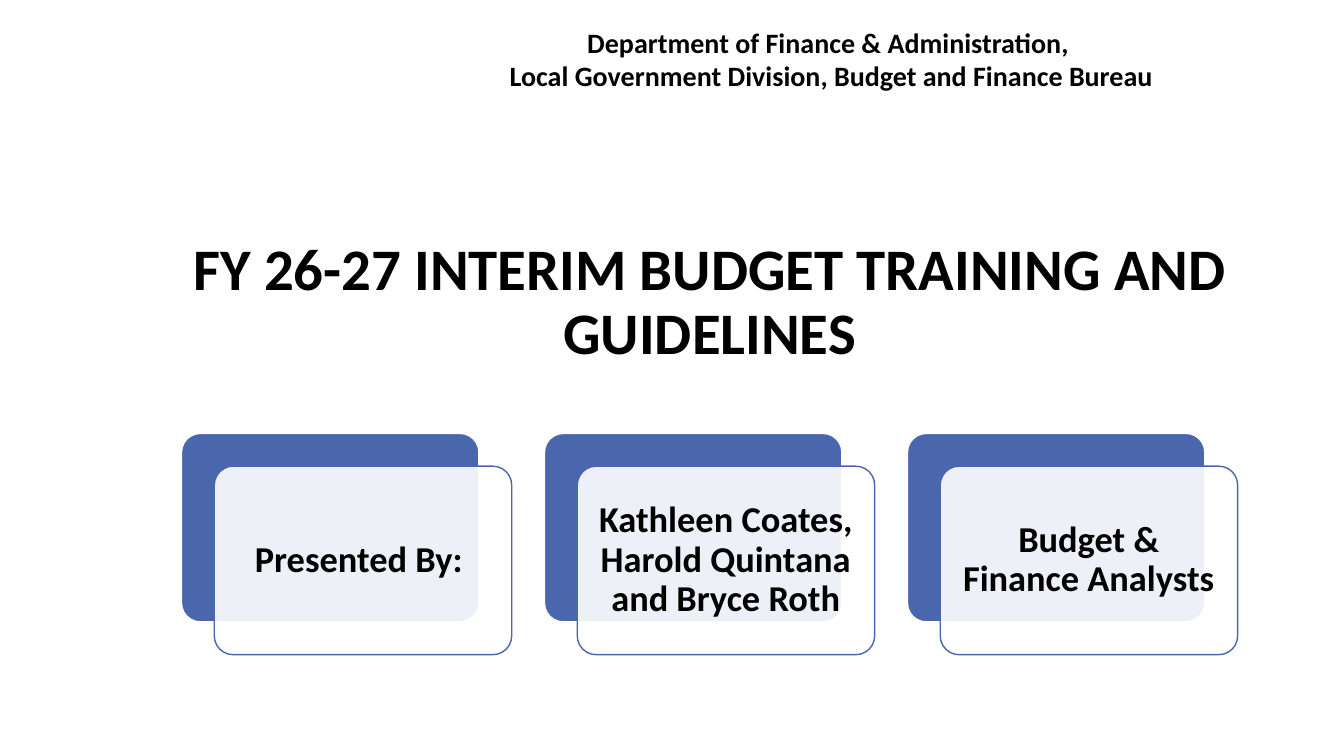
from dataclasses import dataclass

from lxml import etree
from pptx import Presentation
from pptx import util as u
from pptx.dml import color
from pptx.enum import shapes, text
from pptx.oxml import ns


@dataclass(frozen=True)
class Theme:
    font: str = "Calibri"
    ink: str = "000000"
    blue: str = "4A66AC"
    white: str = "FFFFFF"
    title_size: int = 42
    header_size: int = 20
    card_size: int = 26
    card_opacity: int = 90


THEME = Theme()
TITLE = "FY 26-27 INTERIM BUDGET TRAINING AND GUIDELINES"
HEADER = (
    "Department of Finance & Administration, ",
    "Local Government Division, Budget and Finance Bureau",
)
CARDS = (
    "Presented By: ",
    "Kathleen Coates, Harold Quintana and Bryce Roth",
    "Budget & Finance Analysts",
)
CARD_LEFT, CARD_TOP, CARD_PITCH = 1.8, 4.3, 3.6
CARD_WIDTH, CARD_HEIGHT = 2.95, 1.87
CARD_OFFSET = 0.325


def rgb(value):
    return color.RGBColor.from_string(value)


def set_attributes(target, values):
    for name, value in values.items():
        setattr(target, name, value)


def write_text(tf, lines, size, frame, spacing=1.0):
    set_attributes(tf, {"word_wrap": True, **frame})
    for i, line in enumerate(lines):
        p = tf.paragraphs[0] if i == 0 else tf.add_paragraph()
        set_attributes(p, {
            "alignment": text.PP_ALIGN.CENTER,
            "line_spacing": spacing,
            "space_before": u.Pt(0),
        })
        r = p.add_run()
        r.text = line
        set_attributes(r.font, {
            "name": THEME.font, "size": u.Pt(size), "bold": True,
        })
        r.font.color.rgb = rgb(THEME.ink)


def add_title(s):
    sp = s.shapes.title
    set_attributes(sp, {
        "left": u.Inches(1.56), "top": u.Inches(2.05),
        "width": u.Inches(10.96), "height": u.Inches(1.92),
    })
    frame = {
        "vertical_anchor": text.MSO_ANCHOR.MIDDLE,
        "auto_size": text.MSO_AUTO_SIZE.NONE,
    }
    write_text(sp.text_frame, [TITLE], THEME.title_size, frame, 0.9)


def add_header(s):
    sp = s.shapes.add_textbox(
        u.Inches(2.98), u.Inches(0.2), u.Inches(10.53), u.Inches(0.77))
    frame = {"auto_size": text.MSO_AUTO_SIZE.SHAPE_TO_FIT_TEXT}
    write_text(sp.text_frame, HEADER, THEME.header_size, frame)


def add_panel(s, left, top, fill, line, opacity=100):
    sp = s.shapes.add_shape(
        shapes.MSO_SHAPE.ROUNDED_RECTANGLE, u.Inches(left), u.Inches(top),
        u.Inches(CARD_WIDTH), u.Inches(CARD_HEIGHT))
    sp.adjustments[0] = 0.1
    sp.shadow.inherit = False
    sp.fill.solid()
    sp.fill.fore_color.rgb = rgb(fill)
    sp.line.color.rgb = rgb(line)
    sp.line.width = u.Pt(1)
    if opacity < 100:
        fill_color = sp.fill._xPr.find(ns.qn("a:solidFill"))[0]
        etree.SubElement(fill_color, ns.qn("a:alpha"), val=str(opacity * 1000))
    return sp


def add_card(s, left, label):
    add_panel(s, left, CARD_TOP, THEME.blue, THEME.white)
    sp = add_panel(s, left + CARD_OFFSET, CARD_TOP + CARD_OFFSET,
                   THEME.white, THEME.blue, THEME.card_opacity)
    sides = ("left", "right", "top", "bottom")
    frame = {f"margin_{side}": u.Inches(0.11) for side in sides}
    frame["vertical_anchor"] = text.MSO_ANCHOR.MIDDLE
    write_text(sp.text_frame, [label], THEME.card_size, frame, 0.9)


def main():
    prs = Presentation()
    prs.slide_width, prs.slide_height = u.Inches(13.33), u.Inches(7.5)
    s = prs.slides.add_slide(prs.slide_layouts.get_by_name("Title Only"))
    s.background.fill.solid()
    s.background.fill.fore_color.rgb = rgb(THEME.white)
    add_title(s)
    add_header(s)
    for i, label in enumerate(CARDS):
        add_card(s, CARD_LEFT + i * CARD_PITCH, label)
    prs.save("out.pptx")


if __name__ == "__main__":
    main()
